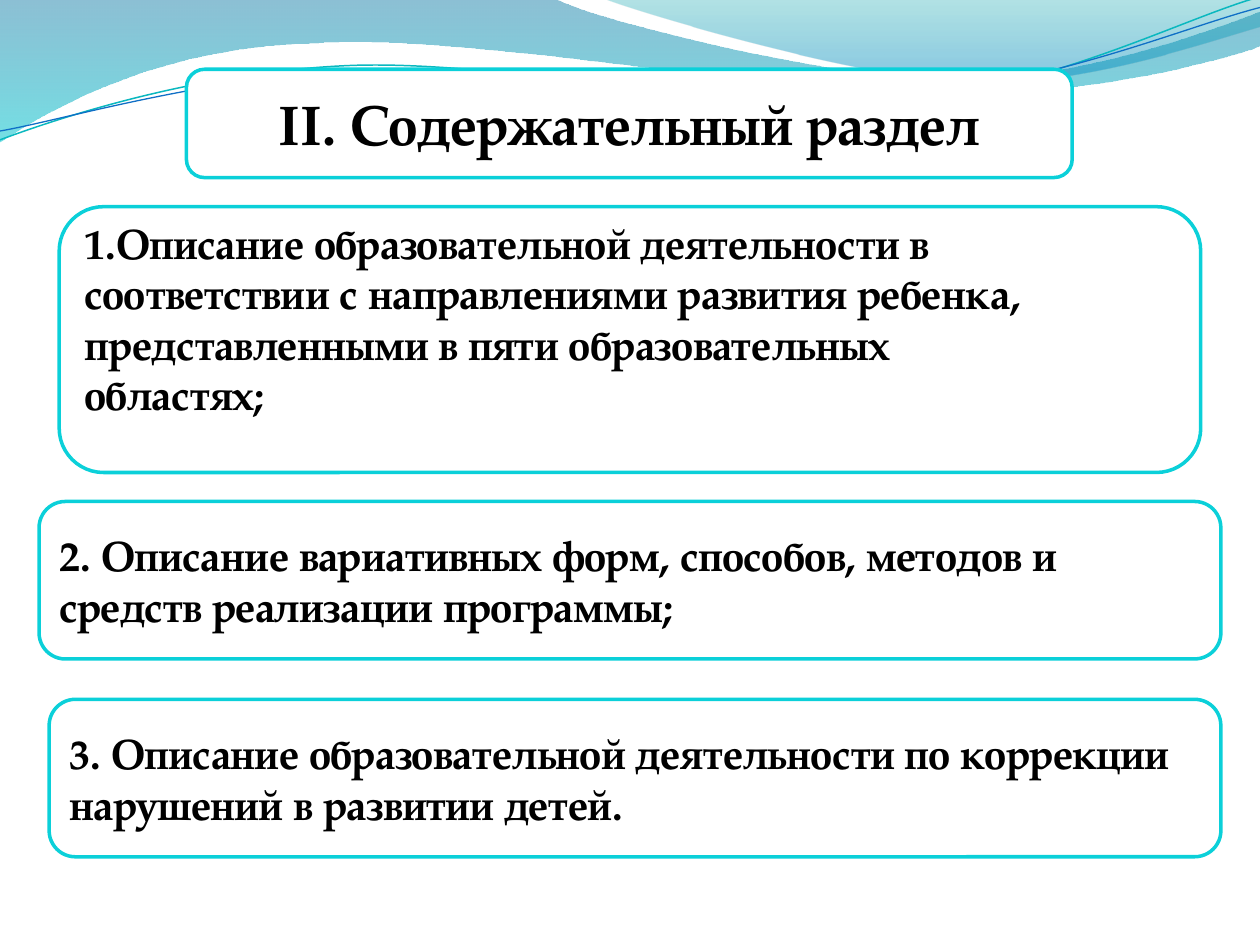
from math import cos, radians, sin

from lxml.etree import Element, SubElement
from pptx import Presentation
from pptx.dml.color import RGBColor
from pptx.enum.shapes import MSO_SHAPE as Shape
from pptx.enum.text import MSO_ANCHOR as Anchor, PP_ALIGN as Align
from pptx.oxml.ns import qn
from pptx.util import Inches, Pt

FONT = "TeX Gyre Pagella"
WHITE = RGBColor(0xFF, 0xFF, 0xFF)
BLACK = RGBColor(0, 0, 0)
CYAN = RGBColor(0x0B, 0xD0, 0xD9)
TEAL = RGBColor(0x0A, 0xB8, 0xBF)
BLUE = RGBColor(0x0F, 0x6F, 0xC6)
DEEP = RGBColor(0x00, 0x74, 0xA1)
AQUA = RGBColor(0x00, 0xC6, 0xCF)
SEA = RGBColor(0x00, 0xA1, 0xA9)
SKY = RGBColor(0x00, 0x8B, 0xBF)
TILT = 2.7

prs = Presentation()
prs.slide_width, prs.slide_height = Inches(10), Inches(7.5)
slide = prs.slides.add_slide(prs.slide_layouts[6])
shapes = slide.shapes


def add_curve(start, parts, close):
    """Draw parts of one point (a line) or three points (a cubic Bezier)."""
    pts = [(Inches(x), Inches(y)) for part in parts for x, y in part]
    pen = shapes.build_freeform(Inches(start[0]), Inches(start[1]))
    pen.add_line_segments(pts, close=close)
    curve = pen.convert_to_shape()
    curve.shadow.inherit = False
    legs = list(curve.element.iter(qn("a:lnTo")))
    for part in parts:
        group, legs = legs[:len(part)], legs[len(part):]
        if len(group) == 3:
            bend = Element(qn("a:cubicBezTo"))
            group[0].addprevious(bend)
            for leg in group:
                bend.append(leg[0])
                leg.getparent().remove(leg)
    return curve


def turn(point, mid):
    """Turn a point clockwise by TILT degrees around mid."""
    c, s = cos(radians(TILT)), sin(radians(TILT))
    dx, dy = point[0] - mid[0], point[1] - mid[1]
    return mid[0] + dx * c - dy * s, mid[1] + dx * s + dy * c


# Filled waves: start, parts, gradient stops (position, colour, opacity %)
waves = [
    ((0, 0), [
        [(4.4, -0.01)],
        [(4.76, 0.17), (6.64, 0.63), (7.58, 0.63)],
        [(8.53, 0.63), (9.58, 0.26), (10, 0.09)],
        [(10.01, 0.36)],
        [(9.83, 0.44), (8.7, 0.76), (7.46, 0.75)],
        [(6.22, 0.75), (3.82, 0.28), (2.57, 0.34)],
        [(1.29, 0.36), (0.46, 0.83), (-0.01, 1.13)],
        [(0, 0)],
    ], [(0, DEEP, 45), (1, AQUA, 55)]),
    ((4.79, -0.01), [
        [(5.09, 0.11), (6.82, 0.62), (7.69, 0.65)],
        [(8.56, 0.69), (9.61, 0.32), (10, 0.21)],
        [(10, 0)],
        [(4.79, -0.01)],
    ], [(0, SEA, 30), (0.8, SKY, 45)]),
]
for start, parts, stops in waves:
    wave = add_curve(start, parts, True)
    wave.line.fill.background()
    wave.fill.gradient()
    wave.fill.gradient_angle = 270
    for stop, (pos, color, _) in zip(wave.fill.gradient_stops, stops):
        stop.position = pos
        stop.color.rgb = color
    for clr, (_, _, alpha) in zip(wave.element.iter(qn("a:srgbClr")), stops):
        SubElement(clr, qn("a:alpha")).set("val", str(alpha * 1000))

# Thin tilted lines along the waves: start, parts, centre, colour, width
threads = [
    ((0, 1.11), [
        [(0.48, 0.93), (1.58, 0.57), (2.77, 0.52)],
        [(3.95, 0.47), (5.93, 0.89), (7.13, 0.8)],
        [(8.33, 0.71), (9.38, 0.15), (9.98, -0.02)],
    ], (4.99, 0.58), TEAL, 0.85),
    ((0, 1.04), [
        [(0.47, 0.96), (1.64, 0.61), (2.83, 0.56)],
        [(4.03, 0.51), (5.97, 0.84), (7.17, 0.75)],
        [(8.36, 0.67), (9.41, 0.21), (10, 0.06)],
    ], (5, 0.59), BLUE, 0.75),
]
for start, parts, mid, color, width in threads:
    level = [[turn(point, mid) for point in part] for part in parts]
    thread = add_curve(turn(start, mid), level, False)
    thread.rotation = -TILT
    thread.fill.background()
    thread.line.color.rgb = color
    thread.line.width = Pt(width)

# Boxes: place, text size, alignment, bottom margin, paragraphs
boxes = [
    ((1.48, 0.55, 7.03, 0.86), 32, Align.CENTER, 0.05,
     ["II. Содержательный раздел"]),
    ((0.47, 1.64, 9.06, 2.11), 24, Align.JUSTIFY, 0.39,
     ["1.Описание образовательной деятельности в",
      "соответствии с направлениями развития ребенка,",
      "представленными в пяти образовательных",
      "областях;"]),
    ((0.31, 3.98, 9.38, 1.25), 24, Align.LEFT, 0.05,
     ["2. Описание вариативных форм, способов, методов и средств "
      "реализации программы;"]),
    ((0.39, 5.55, 9.3, 1.25), 24, Align.LEFT, 0.05,
     ["3. Описание образовательной деятельности по коррекции нарушений "
      "в развитии детей."]),
]
for place, size, align, bottom, lines in boxes:
    box = shapes.add_shape(Shape.ROUNDED_RECTANGLE, *map(Inches, place))
    box.shadow.inherit = False
    box.fill.solid()
    box.fill.fore_color.rgb = WHITE
    box.line.color.rgb = CYAN
    box.line.width = Pt(2)
    frame = box.text_frame
    frame.word_wrap = True
    frame.vertical_anchor = Anchor.MIDDLE
    frame.margin_bottom = Inches(bottom)
    frame.text = "\n".join(lines)
    for para in frame.paragraphs:
        para.alignment = align
        font = para.runs[0].font
        font.name, font.size, font.bold = FONT, Pt(size), True
        font.color.rgb = BLACK

prs.save("out.pptx")
